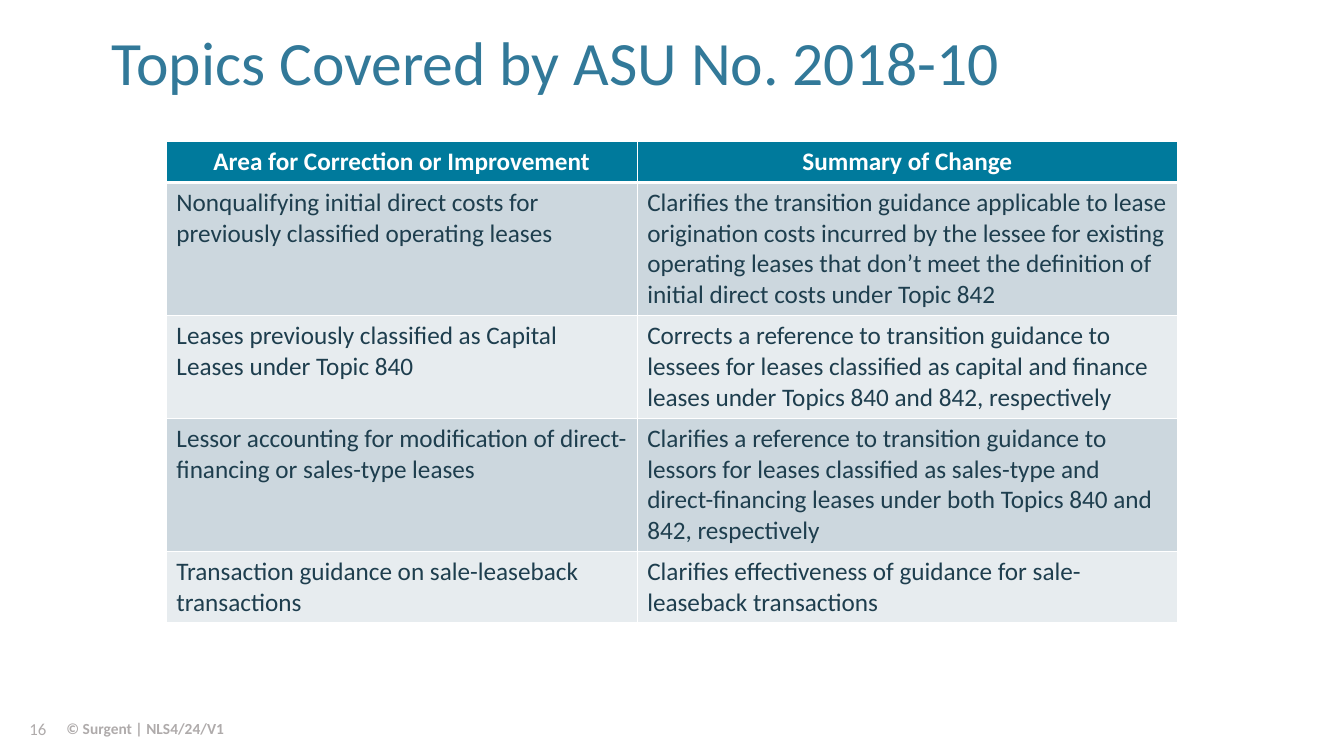
from lxml.etree import SubElement
from pptx import Presentation
from pptx.dml.color import RGBColor
from pptx.enum.text import MSO_ANCHOR as Anchor, PP_ALIGN as Align
from pptx.oxml.ns import qn
from pptx.util import Inches, Pt

WHITE = RGBColor(0xFF, 0xFF, 0xFF)
TITLE_BLUE = RGBColor(0x32, 0x79, 0x99)
HEADER_TEAL = RGBColor(0x00, 0x7A, 0x9C)
BODY_INK = RGBColor(0x1E, 0x3E, 0x4E)
BAND_DARK = RGBColor(0xCC, 0xD7, 0xDE)
BAND_LIGHT = RGBColor(0xE7, 0xEC, 0xEF)
FOOTER_GRAY = RGBColor(0xAF, 0xAB, 0xAB)

TITLE_STYLE = {"size": Pt(44), "color": TITLE_BLUE}
HEADER_STYLE = {"size": Pt(18), "bold": True, "color": WHITE}
BODY_STYLE = {"size": Pt(18), "bold": False, "color": BODY_INK}
CREDIT_STYLE = {"size": Pt(11), "bold": True, "color": FOOTER_GRAY}
NUMBER_STYLE = {"size": Pt(12), "color": FOOTER_GRAY}

COLUMN_WIDTHS = [4.67, 5.36]
ROW_HEIGHTS = [0.41, 1.32, 1.02, 1.32, 0.71]
TOPICS = [
    ("Area for Correction or Improvement", "Summary of Change"),
    ("Nonqualifying initial direct costs for previously classified operating leases",
     "Clarifies the transition guidance applicable to lease origination costs incurred by "
     "the lessee for existing operating leases that don’t meet the definition of initial "
     "direct costs under Topic 842"),
    ("Leases previously classified as Capital Leases under Topic 840",
     "Corrects a reference to transition guidance to lessees for leases classified as "
     "capital and finance leases under Topics 840 and 842, respectively"),
    ("Lessor accounting for modification of direct-financing or sales-type leases",
     "Clarifies a reference to transition guidance to lessors for leases classified as "
     "sales-type and direct-financing leases under both Topics 840 and 842, respectively"),
    ("Transaction guidance on sale-leaseback transactions",
     "Clarifies effectiveness of guidance for sale-leaseback transactions"),
]


def write_text(frame, text, style, align=Align.LEFT):
    para = frame.paragraphs[0]
    para.alignment = align
    span = para.add_run()
    span.text = text
    span.font.name = "Calibri"
    for name, value in style.items():
        if name == "color":
            span.font.color.rgb = value
        else:
            setattr(span.font, name, value)
    return para


def add_text(page, left, top, width, height, text, style, align=Align.LEFT):
    box = page.shapes.add_textbox(Inches(left), Inches(top), Inches(width), Inches(height))
    frame = box.text_frame
    frame.word_wrap = True
    frame.vertical_anchor = Anchor.MIDDLE
    return write_text(frame, text, style, align)


def set_borders(cell, widths):
    properties = cell._tc.get_or_add_tcPr()
    for side, width in widths.items():
        line = SubElement(properties, qn(f"a:ln{side}"), w=str(Pt(width)))
        fill = SubElement(line, qn("a:solidFill"))
        SubElement(fill, qn("a:srgbClr"), val=str(WHITE))


def add_title(page, left, top, width, height):
    para = add_text(page, left, top, width, height,
                    "Topics Covered by ASU No. 2018-10", TITLE_STYLE)
    para.line_spacing = 0.75


def add_topics_table(page, left, top):
    table = page.shapes.add_table(
        len(TOPICS), len(COLUMN_WIDTHS), Inches(left), Inches(top),
        Inches(sum(COLUMN_WIDTHS)), Inches(sum(ROW_HEIGHTS))).table
    for column, width in zip(table.columns, COLUMN_WIDTHS):
        column.width = Inches(width)
    for index, (row, height, texts) in enumerate(zip(table.rows, ROW_HEIGHTS, TOPICS)):
        row.height = Inches(height)
        header = index == 0
        color = HEADER_TEAL if header else BAND_DARK if index % 2 else BAND_LIGHT
        borders = {"L": 1, "R": 1, "T": 3 if index == 1 else 1, "B": 3 if header else 1}
        for cell, text in zip(row.cells, texts):
            set_borders(cell, borders)
            cell.fill.solid()
            cell.fill.fore_color.rgb = color
            write_text(cell.text_frame, text, HEADER_STYLE if header else BODY_STYLE,
                       Align.CENTER if header else Align.LEFT)


def add_footer(page, left, top, height):
    number_width = 0.56
    add_text(page, left, top, number_width, height, "16", NUMBER_STYLE, Align.RIGHT)
    add_text(page, left + number_width, top, 2.11, height,
             "© Surgent | NLS4/24/V1", CREDIT_STYLE)


def main():
    deck = Presentation()
    deck.slide_width, deck.slide_height = Inches(13.33), Inches(7.5)
    page = deck.slides.add_slide(deck.slide_layouts[6])
    add_title(page, 1.01, 0.37, 11.75, 0.62)
    add_topics_table(page, 1.65, 1.4)
    add_footer(page, 0, 7.03, 0.4)
    deck.save("out.pptx")


if __name__ == "__main__":
    main()
